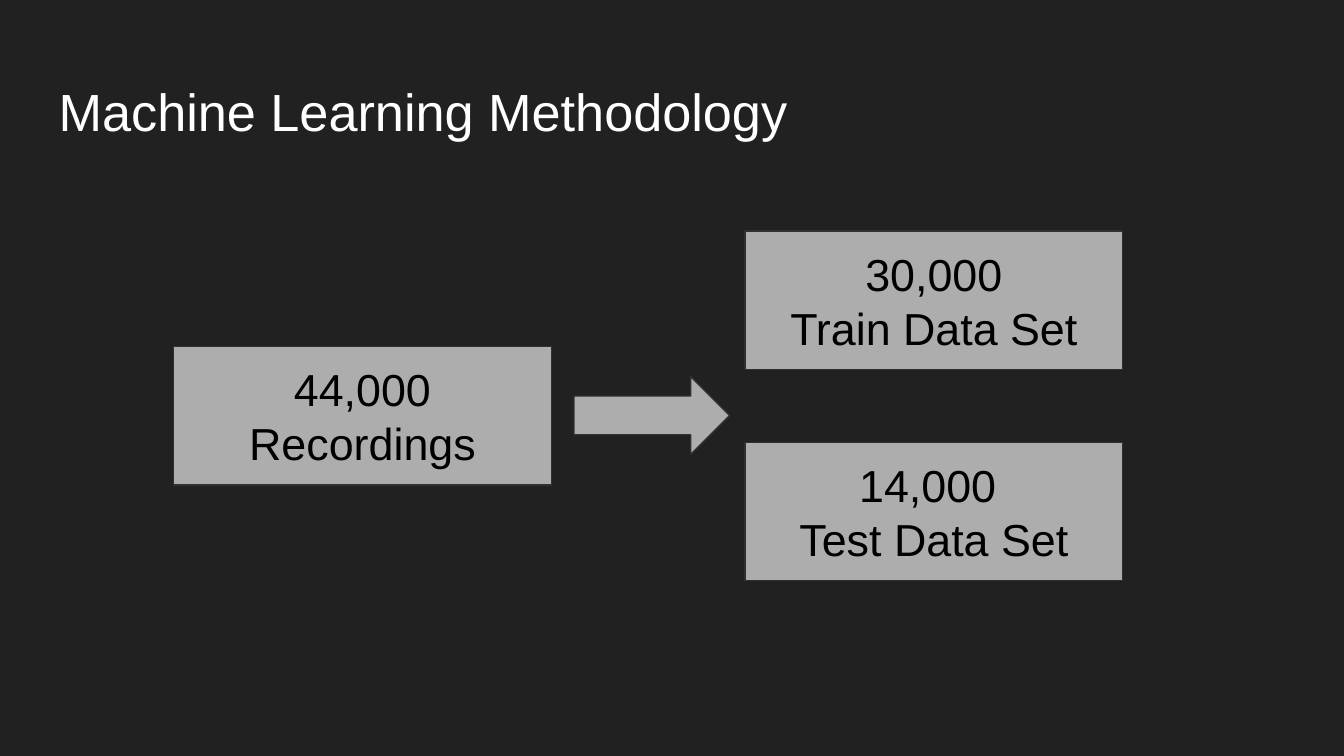
import pptx
import pptx.dml.color
import pptx.enum.shapes
import pptx.enum.text
import pptx.util

Cm = pptx.util.Cm
Shapes = pptx.enum.shapes.MSO_SHAPE
Align = pptx.enum.text.PP_ALIGN
Anchor = pptx.enum.text.MSO_ANCHOR

COLORS = {"background": "212121", "panel": "ADADAD", "outline": "303030",
          "title": "FFFFFF", "label": "000000"}


def color(name):
    return pptx.dml.color.RGBColor.from_string(COLORS[name])


def write_text(frame, text, *, size, fill, align=Align.LEFT, anchor=Anchor.TOP):
    frame.word_wrap = True
    frame.vertical_anchor = anchor
    frame.margin_left = frame.margin_right = Cm(0.25)
    frame.margin_top = frame.margin_bottom = Cm(0.25)
    frame.text = text
    for paragraph in frame.paragraphs:
        paragraph.alignment = align
        for run in paragraph.runs:
            run.font.name = "Arial"
            run.font.size = pptx.util.Pt(size)
            run.font.color.rgb = color(fill)


class FlowSlide:
    """Draws a dark flow diagram of grey boxes and arrows on one slide."""

    box_width, box_height = 7.14, 2.62

    def __init__(self, slide):
        self.slide = slide
        slide.background.fill.solid()
        slide.background.fill.fore_color.rgb = color("background")

    def title(self, text):
        shape = self.slide.shapes.add_textbox(Cm(0.86), Cm(1.24), Cm(23.67), Cm(1.6))
        write_text(shape.text_frame, text, size=28, fill="title")

    def panel(self, kind, left, top, width, height):
        shape = self.slide.shapes.add_shape(kind, Cm(left), Cm(top), Cm(width), Cm(height))
        shape.shadow.inherit = False
        shape.fill.solid()
        shape.fill.fore_color.rgb = color("panel")
        shape.line.color.rgb = color("outline")
        shape.line.width = pptx.util.Pt(0.75)
        return shape

    def box(self, text, left, top):
        shape = self.panel(Shapes.RECTANGLE, left, top, self.box_width, self.box_height)
        write_text(shape.text_frame, text, size=24, fill="label",
                   align=Align.CENTER, anchor=Anchor.MIDDLE)

    def arrow(self, left, top, width, height):
        self.panel(Shapes.RIGHT_ARROW, left, top, width, height)


def main():
    presentation = pptx.Presentation()
    presentation.slide_width, presentation.slide_height = Cm(25.4), Cm(14.29)
    flow = FlowSlide(presentation.slides.add_slide(presentation.slide_layouts[6]))
    flow.title("Machine Learning Methodology")
    flow.box("44,000 Recordings", 3.28, 6.55)
    for text, top in (("30,000\nTrain Data Set", 4.37), ("14,000 \nTest Data Set", 8.36)):
        flow.box(text, 14.08, top)
    flow.arrow(10.85, 7.12, 2.94, 1.47)
    presentation.save("out.pptx")


if __name__ == "__main__":
    main()
